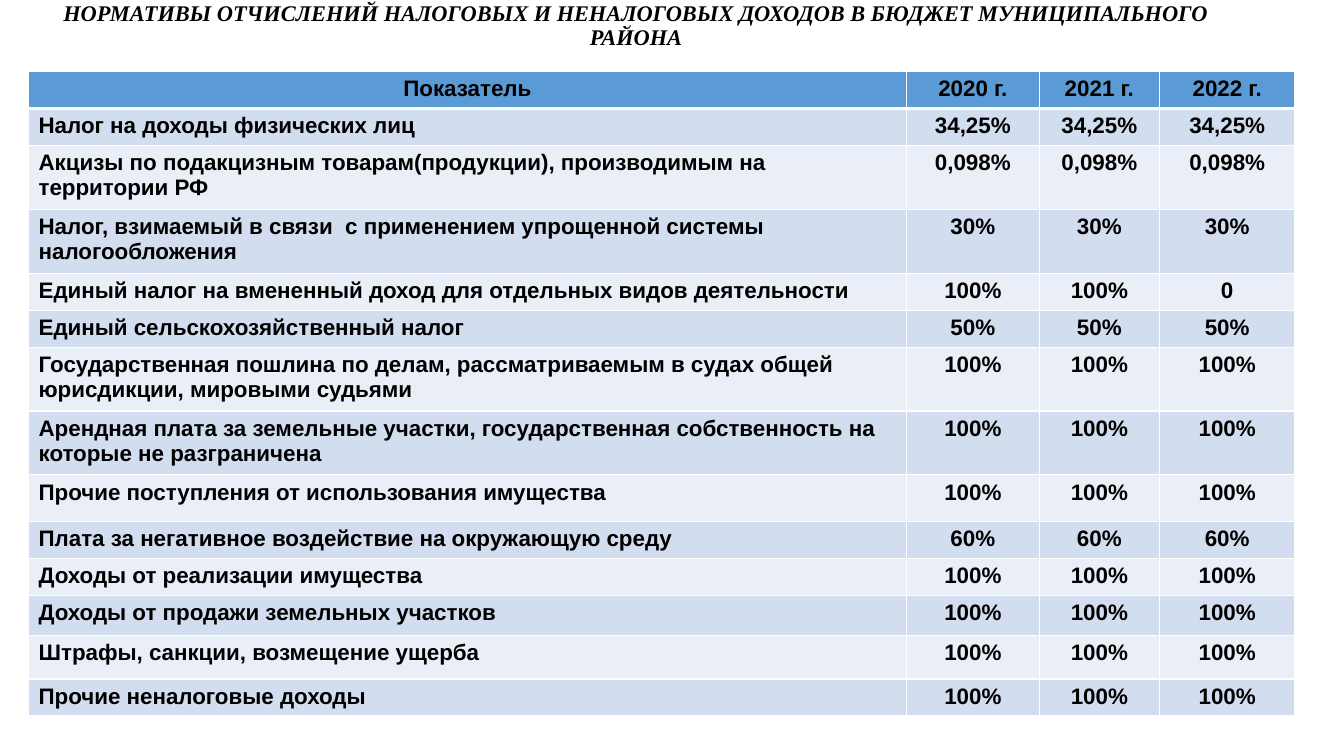
from dataclasses import dataclass

from lxml import etree
from pptx import Presentation
from pptx.dml.color import RGBColor
from pptx.enum.text import MSO_ANCHOR, PP_ALIGN
from pptx.oxml.ns import qn
from pptx.util import Pt

CENTER, LEFT = PP_ALIGN.CENTER, PP_ALIGN.LEFT
BOTTOM = MSO_ANCHOR.BOTTOM


@dataclass(frozen=True)
class Theme:
    title_font: str = "Times New Roman"
    table_font: str = "Arial"
    text_size: int = 16
    text: str = "000000"
    header: str = "5B9BD5"
    bands: tuple = ("D2DEEF", "EAEFF7")
    border: str = "FFFFFF"
    thin: int = 1
    thick: int = 3


theme = Theme()


def add_text(para, text, font, align, italic=False):
    para.alignment = align
    span = para.add_run()
    span.text = text
    span.font.name = font
    span.font.size = Pt(theme.text_size)
    span.font.bold = True
    span.font.italic = italic
    span.font.color.rgb = RGBColor.from_string(theme.text)


def add_borders(cell, top, bottom):
    properties = cell._tc.get_or_add_tcPr()
    widths = {"a:lnL": theme.thin, "a:lnR": theme.thin, "a:lnT": top, "a:lnB": bottom}
    for position, (side, width) in enumerate(widths.items()):
        line = etree.Element(qn(side), w=str(Pt(width)))
        solid = etree.SubElement(line, qn("a:solidFill"))
        etree.SubElement(solid, qn("a:srgbClr"), val=theme.border)
        properties.insert(position, line)


# Table content with row heights
years = ("2020 г.", "2021 г.", "2022 г.")
full_share = ("100%",) * 3
rows = [
    (25, "Показатель", years),
    (26.5, "Налог на доходы физических лиц", ("34,25%",) * 3),
    (43, "Акцизы по подакцизным товарам(продукции), производимым на территории РФ", ("0,098%",) * 3),
    (43, "Налог, взимаемый в связи  с применением упрощенной системы налогообложения", ("30%",) * 3),
    (25, "Единый налог на вмененный доход для отдельных видов деятельности", ("100%", "100%", "0")),
    (25, "Единый сельскохозяйственный налог", ("50%",) * 3),
    (44.5, "Государственная пошлина по делам, рассматриваемым в судах общей юрисдикции, мировыми судьями", full_share),
    (45, "Арендная плата за земельные участки, государственная собственность на которые не разграничена", full_share),
    (33.5, "Прочие поступления от использования имущества", full_share),
    (26.5, "Плата за негативное воздействие на окружающую среду", ("60%",) * 3),
    (25, "Доходы от реализации имущества", full_share),
    (28.5, "Доходы от продажи земельных участков", full_share),
    (31, "Штрафы, санкции, возмещение ущерба", full_share),
    (25, "Прочие неналоговые доходы", full_share),
]
column_widths = (627, 95, 85.7, 97)

# Blank slide
deck = Presentation()
deck.slide_width, deck.slide_height = Pt(960), Pt(540)
page = deck.slides.add_slide(deck.slide_layouts[6])

# Title
box = page.shapes.add_textbox(Pt(15.1), Pt(6.5), Pt(878.4), Pt(42.5))
frame = box.text_frame
frame.word_wrap = True
frame.vertical_anchor = BOTTOM
frame.margin_top, frame.margin_bottom = Pt(0), Pt(13)
para = frame.paragraphs[0]
para.line_spacing = 0.9
add_text(
    para,
    "НОРМАТИВЫ ОТЧИСЛЕНИЙ НАЛОГОВЫХ И НЕНАЛОГОВЫХ ДОХОДОВ В БЮДЖЕТ МУНИЦИПАЛЬНОГО РАЙОНА",
    theme.title_font, CENTER, italic=True,
)

# Table grid
table = page.shapes.add_table(
    len(rows), len(column_widths), Pt(20.4), Pt(51),
    Pt(sum(column_widths)), Pt(sum(height for height, _, _ in rows)),
).table
for column, width in zip(table.columns, column_widths):
    column.width = Pt(width)

# Table cells: blue header, then alternating bands
for row_index, (height, label, shares) in enumerate(rows):
    table.rows[row_index].height = Pt(height)
    fill = theme.bands[(row_index - 1) % 2] if row_index else theme.header
    top = theme.thick if row_index == 1 else theme.thin
    bottom = theme.thick if row_index == 0 else theme.thin
    for column_index, text in enumerate((label, *shares)):
        cell = table.cell(row_index, column_index)
        cell.fill.solid()
        cell.fill.fore_color.rgb = RGBColor.from_string(fill)
        add_borders(cell, top, bottom)
        align = LEFT if row_index and column_index == 0 else CENTER
        add_text(cell.text_frame.paragraphs[0], text, theme.table_font, align)

deck.save("out.pptx")
